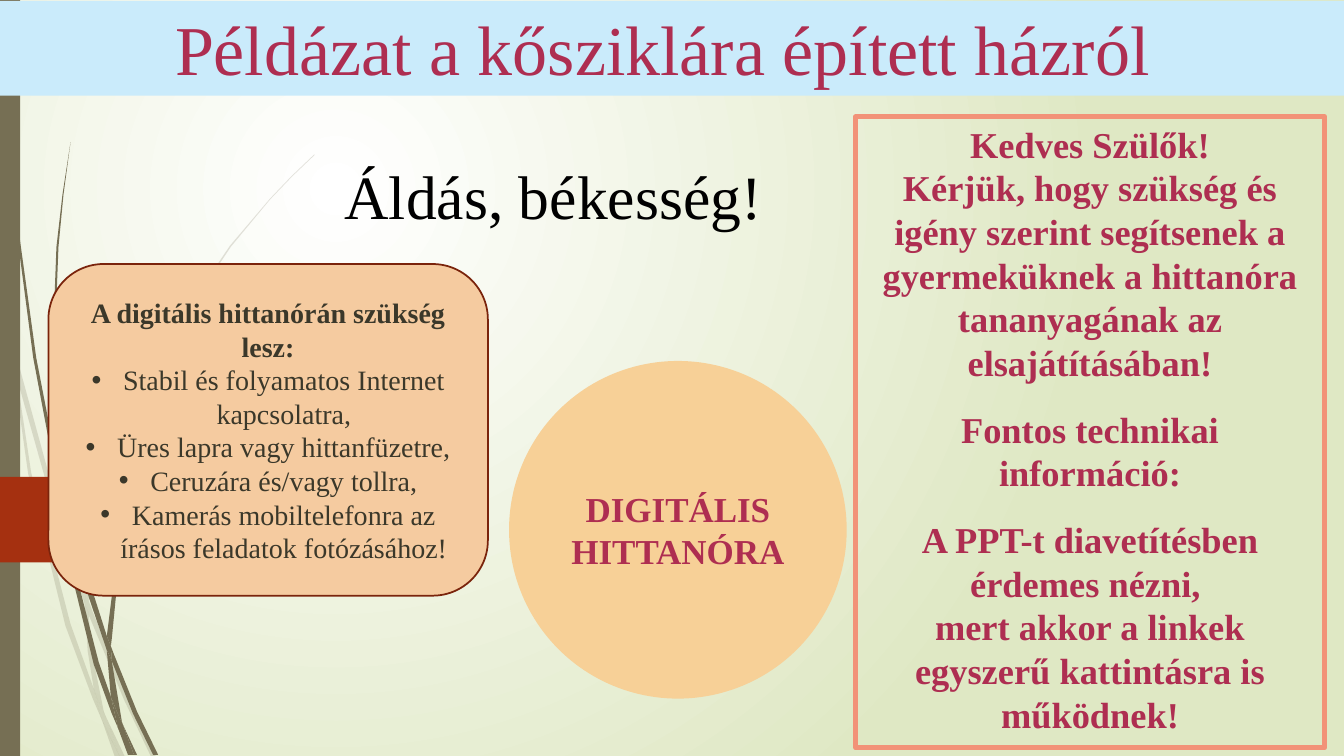
from lxml import etree
from pptx import Presentation
from pptx.dml.color import RGBColor
from pptx.enum import shapes, text
from pptx.oxml import ns
from pptx.util import Pt

FONT = "Times New Roman"
CRIMSON, OLIVE, DARK, BLACK = "AE2E51", "766F54", "3B382A", "000000"
GRID = Pt(0.72)  # outline coordinates are hundredths of an inch

PALE_GRASS = [
    [(11, 350), (9, 322), (0, 282), (0, 299), (10, 344)],
    [(58, 522), (84, 599), (85, 586), (62, 520), (14, 345), (17, 376)],
    [(92, 607), (88, 596), (88, 610), (123, 694), (150, 751), (155, 751), (127, 692)],
    [(119, 751), (124, 751), (105, 711)],
    [(93, 683), (70, 619), (31, 469), (17, 376), (11, 350), (28, 470), (65, 621),
     (92, 693), (101, 714), (99, 707)],
    [(84, 599), (87, 646), (93, 683), (96, 692), (105, 711), (103, 706), (91, 646),
     (88, 610), (88, 608)],
    [(88, 584), (93, 522), (110, 462), (160, 349), (229, 245), (268, 198), (290, 175),
     (312, 154), (312, 153), (289, 175), (268, 197), (228, 244), (158, 348), (107, 461),
     (90, 521), (85, 584), (85, 586), (88, 596)],
    [(101, 714), (114, 751), (119, 751)],
    [(88, 608), (88, 610), (88, 596), (85, 586), (84, 599)],
    [(96, 692), (93, 683), (99, 707), (101, 714), (119, 751), (105, 711)],
]
DARK_GRASS = [
    [(7, 110), (17, 233), (33, 355), (56, 477), (57, 481), (55, 457), (55, 453),
     (36, 355), (19, 232), (8, 109), (5, 48), (4, 0), (3, 0), (4, 48)],
    [(88, 592), (106, 645), (106, 633), (106, 631), (93, 590), (60, 472), (64, 505)],
    [(113, 649), (110, 641), (111, 656), (132, 708), (152, 749), (157, 749), (136, 706)],
    [(110, 691), (98, 657), (72, 556), (64, 505), (57, 477), (68, 557), (93, 659),
     (111, 708), (117, 722), (116, 717)],
    [(60, 472), (58, 453), (54, 349), (58, 245), (63, 193), (70, 141), (62, 193),
     (56, 245), (52, 349), (55, 449)],
    [(133, 749), (136, 749), (122, 719)],
    [(111, 633), (115, 592), (125, 552), (158, 476), (205, 406), (231, 374), (245, 359),
     (261, 344), (260, 344), (245, 358), (231, 373), (204, 405), (156, 474), (122, 551),
     (111, 591), (106, 631), (110, 641)],
    [(117, 722), (127, 749), (131, 749)],
    [(106, 645), (110, 691), (116, 706), (122, 719), (121, 716), (111, 656), (109, 651)],
    [(106, 645), (109, 651), (111, 656), (110, 641), (106, 631), (106, 633)],
    [(116, 706), (110, 691), (116, 717), (117, 722), (130, 749), (133, 749), (122, 719)],
]
ARROW_TAB = [(147, 558), (150, 557), (190, 517), (190, 513), (151, 474), (147, 473),
             (0, 473), (0, 558)]

# Paragraphs: text, bold, bullet, space before
TITLE = [("Példázat a kősziklára épített házról ", False, False, 0)]
GREETING = [("Áldás, békesség!", False, False, 0)]
LESSON = [("DIGITÁLIS HITTANÓRA", True, False, 0)]
PARENTS = [
    ("Kedves Szülők!", True, False, 0),
    ("Kérjük, hogy szükség és igény szerint segítsenek a gyermeküknek a hittanóra "
     "tananyagának az elsajátításában!", True, False, 0),
    ("Fontos technikai információ:", True, False, 16.5),
    ("A PPT-t diavetítésben érdemes nézni, ", True, False, 16.5),
    ("mert akkor a linkek egyszerű kattintásra is működnek!", True, False, 0),
]
NEEDS = [
    ("A digitális hittanórán szükség", True, False, 0),
    ("lesz:", True, False, 0),
    ("Stabil és folyamatos Internet kapcsolatra,", False, True, 0),
    ("Üres lapra vagy hittanfüzetre,", False, True, 0),
    ("Ceruzára és/vagy tollra,", False, True, 0),
    ("Kamerás mobiltelefonra az írásos feladatok fotózásához!", False, True, 0),
]


def rgb(value):
    return RGBColor.from_string(value)


def add_element(parent, tag, **attributes):
    return etree.SubElement(parent, ns.qn(tag), attributes)


def style(shape, fill=None, line=None, width=1):
    shape.shadow.inherit = False
    if fill:
        shape.fill.solid()
        shape.fill.fore_color.rgb = rgb(fill)
    else:
        shape.fill.background()
    if line:
        shape.line.color.rgb = rgb(line)
        shape.line.width = Pt(width)
    else:
        shape.line.fill.background()


def add_outline(slide, points, fill, opacity=100):
    builder = slide.shapes.build_freeform(*points[0], scale=GRID)
    builder.add_line_segments(points[1:], close=True)
    shape = builder.convert_to_shape()
    style(shape, fill)
    if opacity < 100:
        color = shape._element.spPr.find(".//" + ns.qn("a:srgbClr"))
        add_element(color, "a:alpha", val=str(opacity * 1000))


def add_panel(slide, kind, box, **look):
    shape = slide.shapes.add_shape(kind, *map(Pt, box))
    style(shape, **look)
    return shape


def write(shape, paragraphs, size, color, anchor=text.MSO_ANCHOR.TOP,
          align=text.PP_ALIGN.CENTER, wrap=True):
    frame = shape.text_frame
    frame.word_wrap = wrap
    frame.vertical_anchor = anchor
    for index, (words, bold, bullet, before) in enumerate(paragraphs):
        paragraph = frame.add_paragraph() if index else frame.paragraphs[0]
        paragraph.alignment = align
        if before:
            paragraph.space_before = Pt(before)
        if bullet:
            properties = paragraph._p.get_or_add_pPr()
            properties.set("marL", str(Pt(22.5)))
            properties.set("indent", str(-Pt(22.5)))
            add_element(properties, "a:buFont", typeface="Arial")
            add_element(properties, "a:buChar", char="•")
        run = paragraph.add_run()
        run.text = words
        run.font.name = FONT
        run.font.size = Pt(size)
        run.font.bold = bold
        run.font.color.rgb = rgb(color)


def paint_background(slide):
    fill = slide.background.fill
    fill.gradient()
    for stop, color in zip(fill.gradient_stops, ("FFFFFF", "DFE8C4")):
        stop.color.rgb = rgb(color)
    gradient = slide._element.find(".//" + ns.qn("a:gradFill"))
    gradient.remove(gradient.find(ns.qn("a:lin")))
    circle = add_element(gradient, "a:path", path="circle")
    add_element(circle, "a:fillToRect", l="50000", t="50000", r="100000", b="100000")


def main():
    presentation = Presentation()
    presentation.slide_width, presentation.slide_height = Pt(960), Pt(540)
    slide = presentation.slides.add_slide(presentation.slide_layouts[6])
    kinds, middle = shapes.MSO_SHAPE, text.MSO_ANCHOR.MIDDLE
    paint_background(slide)

    for blade in PALE_GRASS:
        add_outline(slide, blade, OLIVE, opacity=20)
    for blade in DARK_GRASS:
        add_outline(slide, blade, OLIVE)
    add_panel(slide, kinds.RECTANGLE, (0, 0, 14.4, 540), fill=OLIVE)
    add_outline(slide, ARROW_TAB, "A53010")

    banner = add_panel(slide, kinds.RECTANGLE, (0, 0.7, 960, 67.7), fill="CAEBFB")
    write(banner, TITLE, 50, CRIMSON)
    disc = add_panel(slide, kinds.OVAL, (363.6, 257.8, 241.2, 241.2), fill="F7D097")
    write(disc, LESSON, 25, CRIMSON, middle)
    notice = add_panel(slide, kinds.RECTANGLE, (611.3, 83.5, 334.8, 450.7),
                       line="F29278", width=3.75)
    write(notice, PARENTS, 26, CRIMSON)
    greeting = slide.shapes.add_textbox(*map(Pt, (239, 109.4, 315.4, 60.5)))
    write(greeting, GREETING, 44, BLACK, align=text.PP_ALIGN.LEFT, wrap=False)
    checklist = add_panel(slide, kinds.ROUNDED_RECTANGLE, (34.6, 188.6, 313.9, 236.9),
                          fill="F5CBA0", line="7A240C", width=1.25)
    write(checklist, NEEDS, 20, DARK, middle)

    presentation.save("out.pptx")


if __name__ == "__main__":
    main()
